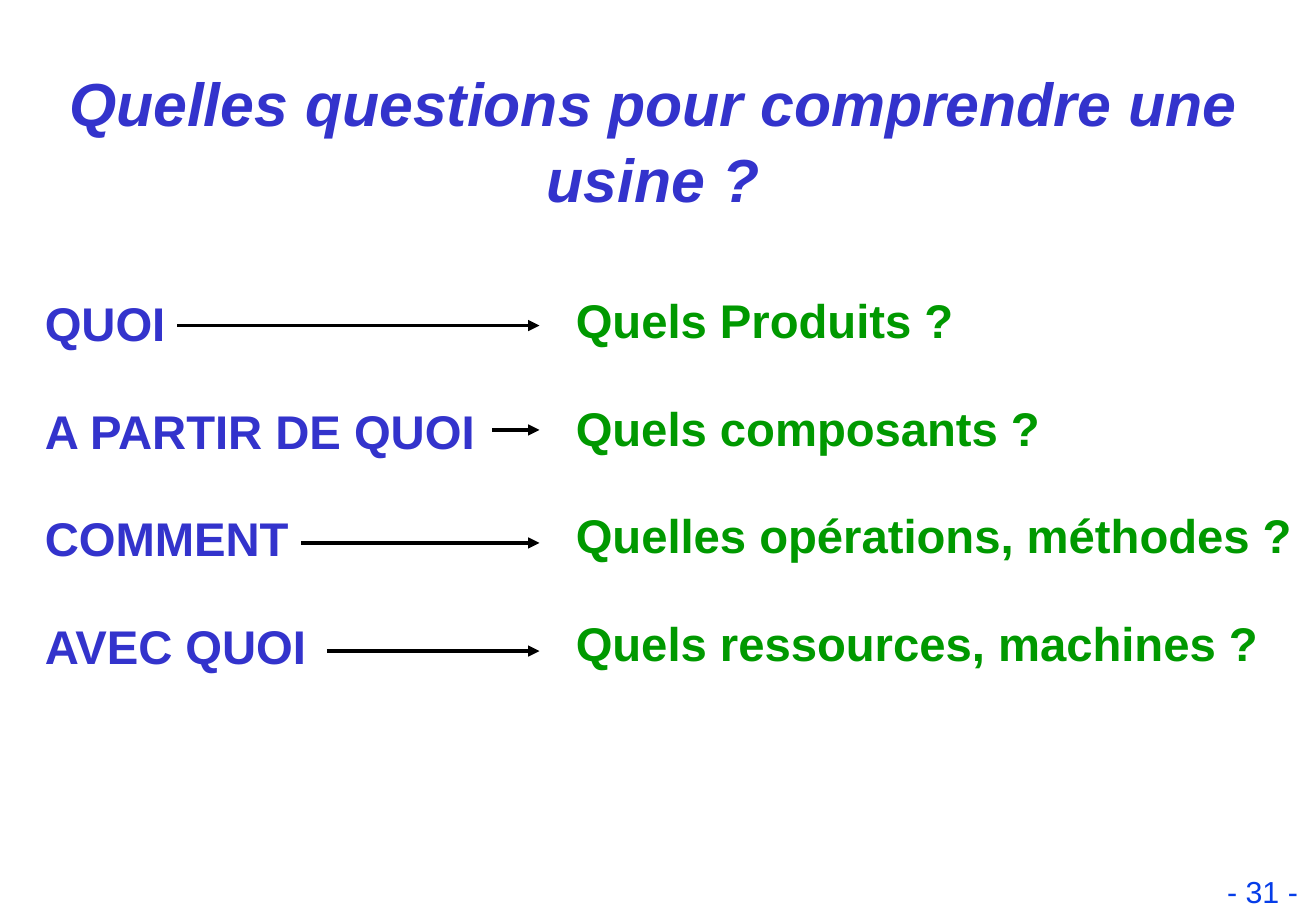
import pptx
import pptx.util
import pptx.dml.color
import pptx.enum.shapes
import pptx.enum.text
from lxml import etree
from pptx.oxml.ns import qn

TITLE = "Quelles questions pour comprendre une usine ?"
PAGE = "- 31 -"
# label, label width, arrow start x, arrow y, answer, answer width
ROWS = [
    ("QUOI", 119, 146, 268, "Quels Produits ?", 331),
    ("A PARTIR DE QUOI", 379, 405, 354, "Quels composants ?", 403),
    ("COMMENT", 221, 248, 447, "Quelles opérations, méthodes ?", 611),
    ("AVEC QUOI", 238, 269, 536, "Quels ressources, machines ?", 583),
]

THEME = {
    "title": dict(size=36, color="3333CC", bold=True, italic=True),
    "label": dict(size=28, color="3333CC", bold=True),
    "answer": dict(size=28, color="009900", bold=True),
    "page": dict(size=18, color="063DE8", bold=False),
    "arrow": dict(width=2.25, color="000000"),
}
FONT = "Arial"

PX_PER_INCH = 100
WIDTH, HEIGHT = 1083, 750
LABEL_X, ANSWER_X, ARROW_END = 27, 464, 444
LABEL_TOP, ANSWER_TOP, ROW_H = 237, 235, 57
ROW_PITCH = 266 / 3

ALIGN = pptx.enum.text.PP_ALIGN
ANCHOR = pptx.enum.text.MSO_ANCHOR


def px(n):
    return pptx.util.Emu(round(n * 914400 / PX_PER_INCH))


def rgb(color):
    return pptx.dml.color.RGBColor.from_string(color)


def put_text(sp, box, text, style, align=ALIGN.LEFT, wrap=True):
    for name, value in zip(("left", "top", "width", "height"), box):
        setattr(sp, name, px(value))
    tf = sp.text_frame
    frame = dict(word_wrap=wrap, vertical_anchor=ANCHOR.TOP,
                 auto_size=pptx.enum.text.MSO_AUTO_SIZE.NONE,
                 margin_left=px(10), margin_right=px(10),
                 margin_top=px(5), margin_bottom=px(5))
    for name, value in frame.items():
        setattr(tf, name, value)
    p = tf.paragraphs[0]
    p.alignment = align
    r = p.add_run()
    r.text = text
    font = dict(THEME[style], name=FONT)
    font["size"] = pptx.util.Pt(font["size"])
    r.font.color.rgb = rgb(font.pop("color"))
    for name, value in font.items():
        setattr(r.font, name, value)
    return p


def add_text(s, *args, **kwargs):
    return put_text(s.shapes.add_textbox(0, 0, 0, 0), *args, **kwargs)


def add_arrow(s, x1, x2, y):
    line = s.shapes.add_connector(
        pptx.enum.shapes.MSO_CONNECTOR.STRAIGHT, px(x1), px(y), px(x2), px(y))
    line.line.width = pptx.util.Pt(THEME["arrow"]["width"])
    line.line.color.rgb = rgb(THEME["arrow"]["color"])
    ln = line.line._get_or_add_ln()
    etree.SubElement(ln, qn("a:tailEnd"), type="triangle")
    etree.SubElement(ln.getparent(), qn("a:effectLst"))


def main():
    prs = pptx.Presentation()
    prs.slide_width, prs.slide_height = px(WIDTH), px(HEIGHT)
    s = prs.slides.add_slide(prs.slide_layouts.get_by_name("Title Only"))

    title = put_text(s.shapes.title, (27, 46, 1021, 125), TITLE, "title", ALIGN.CENTER)
    title.line_spacing = 1.05

    for i, (label, label_w, arrow_x, arrow_y, answer, answer_w) in enumerate(ROWS):
        dy = round(i * ROW_PITCH)
        add_text(s, (LABEL_X, LABEL_TOP + dy, label_w, ROW_H), label, "label", wrap=False)
        add_arrow(s, arrow_x, ARROW_END, arrow_y)
        add_text(s, (ANSWER_X, ANSWER_TOP + dy, answer_w, ROW_H), answer, "answer", wrap=False)

    add_text(s, (956, 714, 122, 37), PAGE, "page", ALIGN.RIGHT)
    prs.save("out.pptx")


if __name__ == "__main__":
    main()
